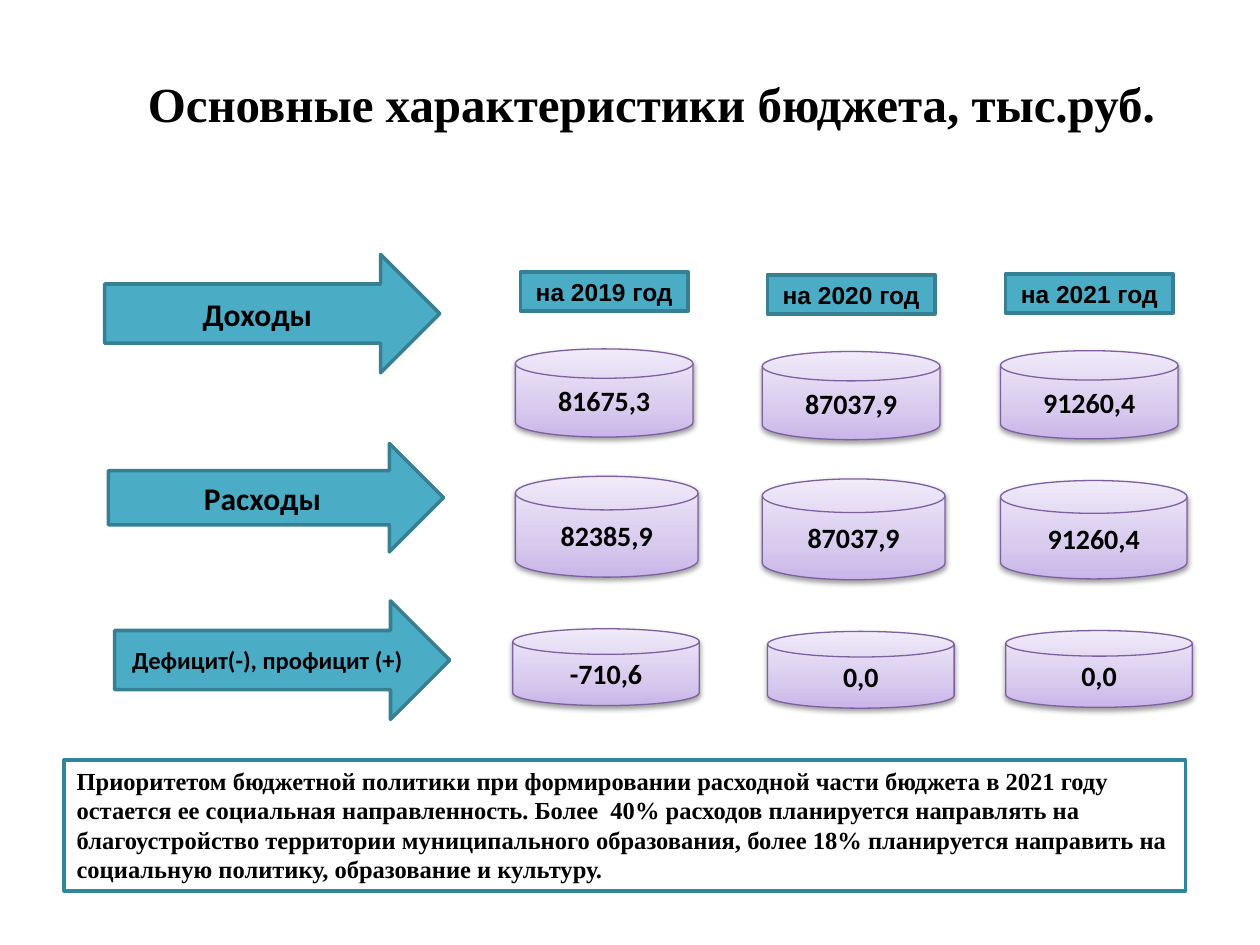
from dataclasses import dataclass

from lxml.etree import SubElement
from pptx import Presentation
from pptx.dml.color import RGBColor
from pptx.enum.shapes import MSO_SHAPE as Shape
from pptx.enum.text import MSO_ANCHOR as Anchor, PP_ALIGN as Align
from pptx.oxml.ns import qn
from pptx.util import Pt


@dataclass(frozen=True)
class Theme:
    text: str = "000000"
    teal: str = "4BACC6"
    teal_line: str = "377F92"
    note_fill: str = "FFFFFF"
    note_line: str = "31859C"
    disk_line: str = "7D60A0"
    disk_stops: tuple = ((0, "C9B5E8"), (35, "D8CBEE"), (100, "F0EAF9"))
    body: str = "Calibri"
    label: str = "Arial"
    serif: str = "Times New Roman"
    title_size: float = 28
    arrow_size: float = 18
    value_size: float = 16
    small_size: float = 14
    thick: float = 2
    thin: float = 0.75


@dataclass(frozen=True)
class Box:
    left: float
    top: float
    width: float
    height: float

    def lengths(self):
        return Pt(self.left), Pt(self.top), Pt(self.width), Pt(self.height)


@dataclass(frozen=True)
class Arrow:
    text: str
    box: Box
    size: float


@dataclass(frozen=True)
class Year:
    label: str
    left: float
    drop: float
    income: str
    expense: str
    balance: str
    balance_shift: float
    expense_width: float = 104.4
    expense_height: float = 57.6


THEME = Theme()
TITLE = "Основные характеристики бюджета, тыс.руб."
NOTE = (
    "Приоритетом бюджетной политики при формировании расходной части бюджета "
    "в 2021 году остается ее социальная направленность. Более  40% расходов "
    "планируется направлять на благоустройство территории муниципального "
    "образования, более 18% планируется направить на социальную политику, "
    "образование и культуру."
)
ARROWS = (
    Arrow("Доходы", Box(59.8, 145.4, 191.5, 67.7), THEME.arrow_size),
    Arrow("Расходы", Box(62, 253.4, 191.5, 62), THEME.arrow_size),
    Arrow("Дефицит(-), профицит (+)", Box(65.5, 343.4, 191.5, 67.7), THEME.small_size),
)
YEARS = (
    Year("на 2019 год", 294.5, 0, "81675,3", "82385,9", "-710,6", -1.5),
    Year("на 2020 год", 435.6, 1.5, "87037,9", "87037,9", "0,0", 3),
    Year("на 2021 год", 571.7, 1, "91260,4", "91260,4", "0,0", 3, 106.6, 56.2),
)
LABEL_TOP, INCOME_TOP, EXPENSE_BOTTOM, BALANCE_TOP = 155.5, 199.4, 329.8, 359.3


def write(sp, text: str, font: str, size: float, align=Align.CENTER, anchor=Anchor.MIDDLE):
    tf = sp.text_frame
    tf.word_wrap = True
    tf.vertical_anchor = anchor
    p = tf.paragraphs[0]
    p.text = text
    p.alignment = align
    p.font.name = font
    p.font.size = Pt(size)
    p.font.bold = True
    p.font.color.rgb = RGBColor.from_string(THEME.text)


def add_block(s, kind: Shape, box: Box, line: str, weight: float, fill: str | None = None):
    sp = s.shapes.add_shape(kind, *box.lengths())
    sp.shadow.inherit = False
    sp.line.color.rgb = RGBColor.from_string(line)
    sp.line.width = Pt(weight)
    if fill:
        sp.fill.solid()
        sp.fill.fore_color.rgb = RGBColor.from_string(fill)
    return sp


def add_teal(s, kind: Shape, box: Box, text: str, font: str, size: float):
    sp = add_block(s, kind, box, THEME.teal_line, THEME.thick, THEME.teal)
    write(sp, text, font, size)


def set_disk_gradient(sp):
    sp.fill.gradient()
    sp.fill.gradient_angle = 90
    stops = next(sp.element.spPr.iter(qn("a:gsLst")))
    for stop in list(stops):
        stops.remove(stop)
    for position, color in THEME.disk_stops:
        stop = SubElement(stops, qn("a:gs"), pos=str(position * 1000))
        SubElement(stop, qn("a:srgbClr"), val=color)


def add_soft_shadow(sp):
    effects = sp.element.spPr.find(qn("a:effectLst"))
    shadow = SubElement(
        effects, qn("a:outerShdw"), blurRad=str(Pt(3.1)), dist=str(Pt(1.6)),
        dir="5400000", rotWithShape="0",
    )
    color = SubElement(shadow, qn("a:srgbClr"), val="000000")
    SubElement(color, qn("a:alpha"), val="38000")


def add_disk(s, box: Box, value: str):
    sp = add_block(s, Shape.FLOWCHART_MAGNETIC_DISK, box, THEME.disk_line, THEME.thin)
    set_disk_gradient(sp)
    add_soft_shadow(sp)
    write(sp, value, THEME.body, THEME.value_size)


def add_year(s, year: Year):
    x, dy = year.left, year.drop
    add_teal(s, Shape.RECTANGLE, Box(x + 2.9, LABEL_TOP + dy, 95.8, 22.3),
             year.label, THEME.label, THEME.small_size)
    add_disk(s, Box(x, INCOME_TOP + dy, 101.5, 50.4), year.income)
    expense_top = EXPENSE_BOTTOM + dy - year.expense_height
    add_disk(s, Box(x, expense_top, year.expense_width, year.expense_height), year.expense)
    add_disk(s, Box(x + year.balance_shift, BALANCE_TOP + dy, 106.6, 43.9), year.balance)


def add_title(s):
    title = s.shapes.title
    title.left, title.top, title.width, title.height = Box(48.2, 49, 648, 72.7).lengths()
    write(title, TITLE, THEME.serif, THEME.title_size)
    # The deep bottom inset lifts the heading within its box.
    title.text_frame.margin_bottom = Pt(57)


def add_note(s):
    sp = add_block(s, Shape.RECTANGLE, Box(36.7, 434.2, 640.8, 74.9),
                   THEME.note_line, THEME.thick, THEME.note_fill)
    write(sp, NOTE, THEME.serif, THEME.small_size, Align.LEFT, Anchor.TOP)


def main():
    prs = Presentation()
    prs.slide_width, prs.slide_height = Pt(720), Pt(540)
    s = prs.slides.add_slide(prs.slide_layouts[5])
    add_title(s)
    for arrow in ARROWS:
        add_teal(s, Shape.RIGHT_ARROW, arrow.box, arrow.text, THEME.body, arrow.size)
    for year in YEARS:
        add_year(s, year)
    add_note(s)
    prs.save("out.pptx")


if __name__ == "__main__":
    main()
